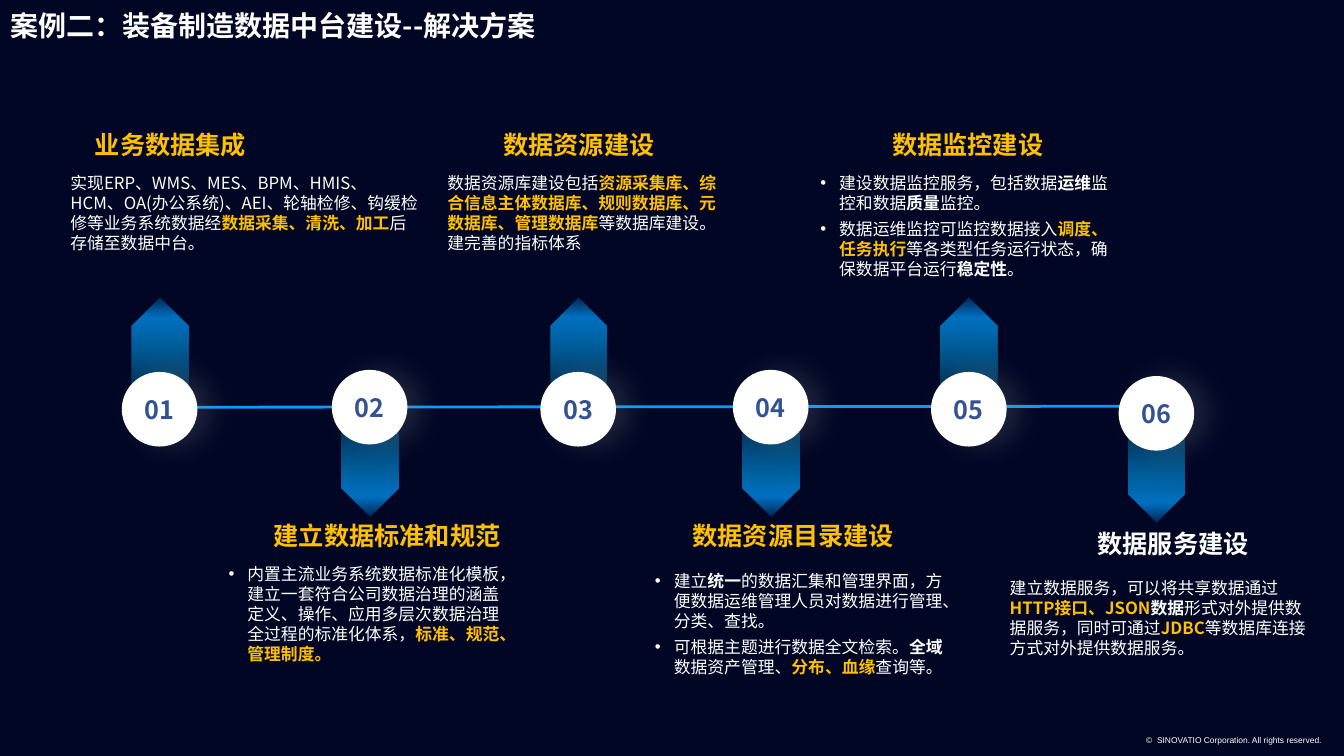
import pptx
import pptx.dml.color
import pptx.enum.shapes
import pptx.enum.text
import pptx.oxml
import pptx.oxml.ns
import pptx.util
from lxml import etree

Pt = pptx.util.Pt
SHAPES = pptx.enum.shapes.MSO_SHAPE
ALIGN = pptx.enum.text.PP_ALIGN
MIDDLE = pptx.enum.text.MSO_ANCHOR.MIDDLE
COLORS = {
    "background": "000624", "white": "FFFFFF", "gold": "FFC000",
    "number": "345291", "line": "0E98FD", "shadow": "A6A6A6",
}
ARROW_STOPS = [(0, "00B0F0", 0), (82, "0070C0", 100), (100, "0074C6", 28)]
STYLES = {"plain": ("white", False), "bold": ("white", True), "gold": ("gold", True)}
CIRCLE = (54, 53.3)
ARROW = (40.4, 79.2)

# Each step: circle left and top, arrow direction, heading, heading box, body box, bullets, paragraphs
STEPS = [
    dict(circle=(87, 265.7), up=True, heading="业务数据集成", heading_box=(52.6, 89.3, 138.2),
         body_box=(43.2, 119.5, 262.8, 82.8), bullets=False, paragraphs=[[
             ("实现ERP、WMS、MES、BPM、HMIS、HCM、OA(办公系统)、AEI、轮轴检修、钩缓检修等业务系统数据经", "plain"),
             ("数据采集、清洗、加工", "gold"), ("后存储至数据中台。", "plain")]]),
    dict(circle=(237, 264.2), up=False, heading="建立数据标准和规范", heading_box=(179.3, 367.9, 194.4),
         body_box=(156.2, 398.9, 218.2, 77.8), bullets=True, paragraphs=[[
             ("内置主流业务系统数据标准化模板，建立一套符合公司数据治理的涵盖定义、操作、应用多层次数据治理全过程的标准化体系，", "plain"),
             ("标准、规范、管理制度。", "gold")]]),
    dict(circle=(386, 265.7), up=True, heading="数据资源建设", heading_box=(328.3, 89.3, 170.6),
         body_box=(312.5, 119.5, 217, 69.1), bullets=False, paragraphs=[[
             ("数据资源库建设包括", "plain"),
             ("资源采集库、综合信息主体数据库、规则数据库、元数据库、管理数据库", "gold"),
             ("等数据库建设。建完善的指标体系", "plain")]]),
    dict(circle=(523.5, 264.2), up=False, heading="数据资源目录建设", heading_box=(482.4, 367.9, 168.5),
         body_box=(460.8, 403.9, 227.5, 67.7), bullets=True, paragraphs=[
             [("建立", "plain"), ("统一", "bold"),
              ("的数据汇集和管理界面，方便数据运维管理人员对数据进行管理、分类、查找。", "plain")],
             [("可根据主题进行数据全文检索。", "plain"), ("全域", "bold"), ("数据资产管理、", "plain"),
              ("分布、血缘", "gold"), ("查询等。", "plain")]]),
    dict(circle=(665, 265.7), up=True, heading="数据监控建设", heading_box=(567.4, 89.3, 247.7),
         body_box=(578.9, 119.5, 227.5, 67.7), bullets=True, paragraphs=[
             [("建设数据监控服务，包括数据", "plain"), ("运维", "bold"), ("监控和数据", "plain"),
              ("质量", "bold"), ("监控。", "plain")],
             [("数据运维监控可监控数据接入", "plain"), ("调度、任务执行", "gold"),
              ("等各类型任务运行状态，确保数据平台运行", "plain"), ("稳定性", "bold"), ("。", "plain")]]),
    dict(circle=(799, 268.6), up=False, heading="数据服务建设", heading_box=(753.8, 373.7, 168.5),
         heading_color="white", body_box=(714.2, 409, 227.5, 67.7), bullets=False, paragraphs=[[
             ("建立数据服务，可以将共享数据通过", "plain"), ("HTTP接口、JSON", "gold"), ("数据", "bold"),
             ("形式对外提供数据服务，同时可通过", "plain"), ("JDBC", "gold"),
             ("等数据库连接方式对外提供数据服务。", "plain")]]),
]


def rgb(name):
    return pptx.dml.color.RGBColor.from_string(COLORS[name])


def add_element(parent, tag, **attributes):
    return etree.SubElement(parent, pptx.oxml.ns.qn(tag), attributes)


def add_color(parent, value, alpha):
    color = add_element(parent, "a:srgbClr", val=value)
    add_element(color, "a:alpha", val=str(alpha * 1000))


class TimelineSlide:
    """Holds the text style and the slide being drawn."""
    font = "Noto Sans CJK SC"

    def __init__(self, slide):
        self.slide = slide
        slide.background.fill.solid()
        slide.background.fill.fore_color.rgb = rgb("background")

    def add_run(self, paragraph, text, size, color="white", bold=False, font=None):
        run = paragraph.add_run()
        run.text = text
        run.font.size = Pt(size)
        run.font.bold = bold
        run.font.color.rgb = rgb(color)
        run.font.name = font or self.font
        add_element(run.font._element, "a:ea", typeface=self.font)

    def title(self, box, runs):
        shape = self.slide.shapes.title
        shape.left, shape.top, shape.width, shape.height = map(Pt, box)
        frame = shape.text_frame
        frame.word_wrap = True
        frame.auto_size = pptx.enum.text.MSO_AUTO_SIZE.NONE
        frame.vertical_anchor = MIDDLE
        paragraph = frame.paragraphs[0]
        paragraph.alignment = ALIGN.LEFT
        for text, font in runs:
            self.add_run(paragraph, text, 20, bold=True, font=font)

    def text_box(self, box):
        frame = self.slide.shapes.add_textbox(*map(Pt, box)).text_frame
        frame.word_wrap = True
        return frame

    def label(self, box, text, size, line_height, **style):
        paragraph = self.text_box(box).paragraphs[0]
        paragraph.alignment = ALIGN.CENTER
        paragraph.line_spacing = Pt(line_height)
        self.add_run(paragraph, text, size, **style)

    def body(self, box, paragraphs, bullets):
        frame = self.text_box(box)
        frame.margin_top = Pt(4)
        for index, runs in enumerate(paragraphs):
            paragraph = frame.add_paragraph() if index else frame.paragraphs[0]
            if bullets:
                properties = paragraph._p.get_or_add_pPr()
                properties.set("marL", str(Pt(13.5)))
                properties.set("indent", str(-Pt(13.5)))
                add_element(properties, "a:buFont", typeface="Arial")
                add_element(properties, "a:buChar", char="•")
            paragraph.line_spacing = Pt(14.3)
            paragraph.space_after = Pt(4)
            for text, style in runs:
                color, bold = STYLES[style]
                self.add_run(paragraph, text, 12, color, bold)

    def shape(self, kind, box):
        shape = self.slide.shapes.add_shape(kind, *map(Pt, box))
        shape.shadow.inherit = False
        shape.line.fill.background()
        return shape

    def arrow(self, circle, up):
        left, top = circle
        offset = -53.3 if up else 25.4
        shape = self.shape(SHAPES.UP_ARROW, (left + 7, top + offset, *ARROW))
        shape.adjustments[0], shape.adjustments[1] = 1, 0.5
        shape.rotation = 0 if up else 180
        shape.fill.gradient()
        shape.fill.gradient_angle = 90
        stops = shape._element.spPr.find(".//" + pptx.oxml.ns.qn("a:gsLst"))
        for stop in list(stops):
            stops.remove(stop)
        for position, color, alpha in ARROW_STOPS:
            add_color(add_element(stops, "a:gs", pos=str(position * 1000)), color, alpha)

    def circle(self, position, number):
        shape = self.shape(SHAPES.OVAL, (*position, *CIRCLE))
        shape.fill.solid()
        shape.fill.fore_color.rgb = rgb("white")
        effects = shape._element.spPr.find(pptx.oxml.ns.qn("a:effectLst"))
        shadow = add_element(effects, "a:outerShdw", blurRad=str(Pt(20)), dist=str(Pt(10)),
                             dir="0", algn="l", rotWithShape="0")
        add_color(shadow, COLORS["shadow"], 20)
        frame = shape.text_frame
        frame.margin_left = frame.margin_right = frame.margin_top = frame.margin_bottom = 0
        frame.vertical_anchor = MIDDLE
        frame.paragraphs[0].alignment = ALIGN.CENTER
        self.add_run(frame.paragraphs[0], f"{number:02d}", 18, "number", True)

    def line(self, start, end):
        straight = pptx.enum.shapes.MSO_CONNECTOR.STRAIGHT
        connector = self.slide.shapes.add_connector(straight, *map(Pt, (*start, *end)))
        connector.line.color.rgb = rgb("line")
        connector.line.width = Pt(2)
        add_element(connector._element.spPr, "a:effectLst")


def main():
    presentation = pptx.Presentation()
    presentation.slide_width, presentation.slide_height = Pt(960), Pt(540)
    timeline = TimelineSlide(presentation.slides.add_slide(presentation.slide_layouts[5]))
    timeline.title((0, 0, 620.6, 36.7),
                   [("案例二：装备制造", "Calibri"), ("数据中台建设--解决方案", None)])
    timeline.label((806.4, 522, 149.8, 14.4), "©  SINOVATIO Corporation. All rights reserved.",
                   6, 7, font="Arial")
    for step in STEPS:
        timeline.arrow(step["circle"], step["up"])
    timeline.line((124.6, 290.9), (801.4, 290.2))
    for number, step in enumerate(STEPS, 1):
        timeline.circle(step["circle"], number)
        timeline.label((*step["heading_box"], 28.8), step["heading"], 18, 21.5,
                       color=step.get("heading_color", "gold"), bold=True)
        timeline.body(step["body_box"], step["paragraphs"], step["bullets"])
    presentation.save("out.pptx")


if __name__ == "__main__":
    main()
